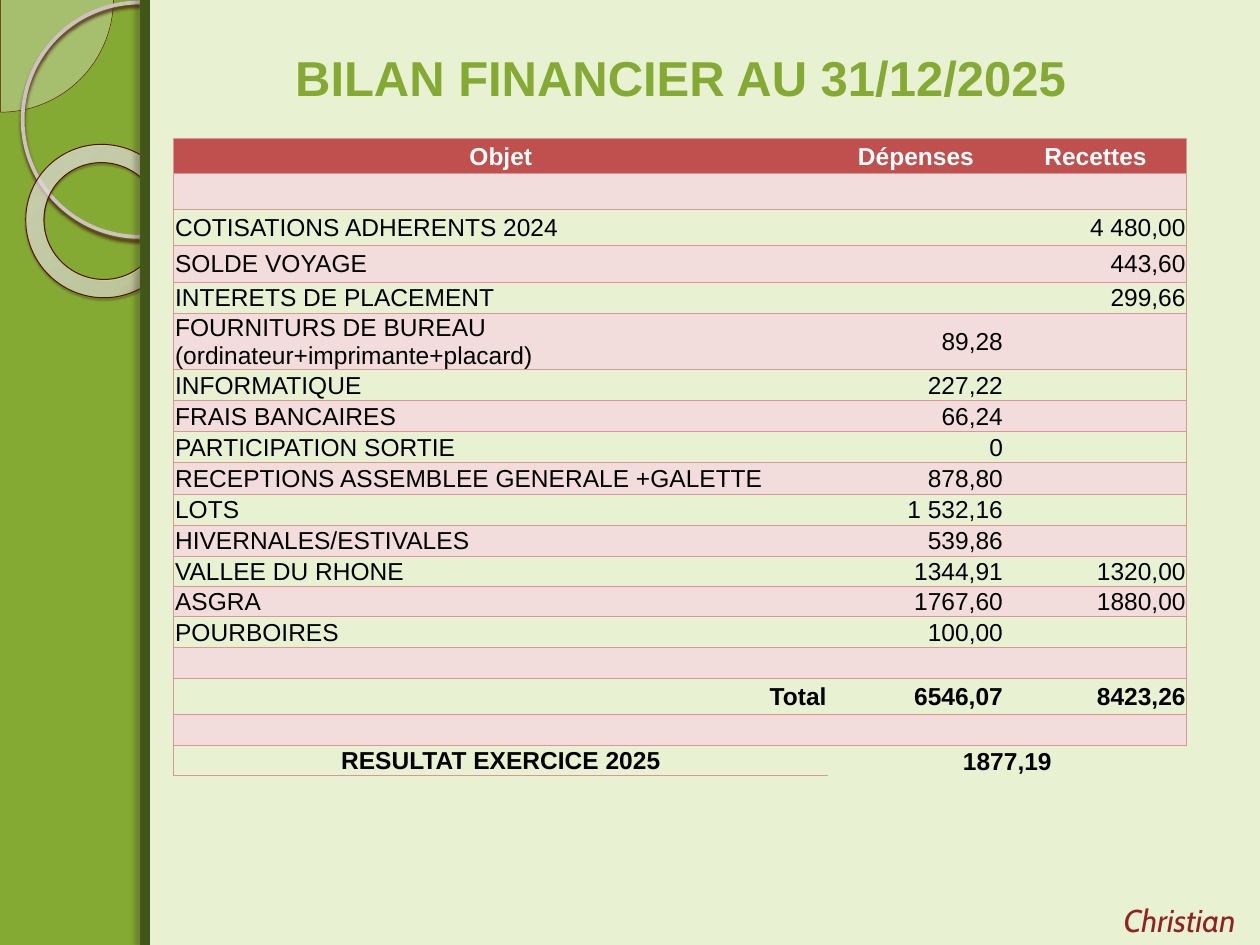
from lxml.etree import SubElement
from pptx import Presentation
from pptx.dml.color import RGBColor
from pptx.enum.shapes import MSO_SHAPE as Shape
from pptx.enum.text import MSO_ANCHOR as Anchor, PP_ALIGN as Align
from pptx.oxml import parse_xml
from pptx.oxml.ns import nsdecls, qn
from pptx.util import Inches, Pt

GREEN = RGBColor(0x84, 0xAA, 0x33)
DARK_GREEN = RGBColor(0x42, 0x55, 0x1A)
PALE_GREEN = RGBColor(0xE8, 0xF2, 0xD3)
LEAF = RGBColor(0xEC, 0xEA, 0xE9)
LEAF_EDGE = RGBColor(0x59, 0x15, 0x02)
RING = RGBColor(0xCE, 0xC2, 0xC0)
DONUT_EDGE = RGBColor(0x56, 0x12, 0x00)
RED = RGBColor(0xC0, 0x50, 0x4D)
PINK = RGBColor(0xF2, 0xDD, 0xDC)
BORDER = RGBColor(0xD9, 0x97, 0x95)
WINE = RGBColor(0x92, 0x22, 0x22)
WHITE = RGBColor(0xFF, 0xFF, 0xFF)
BLACK = RGBColor(0, 0, 0)
NO_STYLE = "{2D5ABB26-0587-4C30-8999-92F81FD0307C}"

prs = Presentation()
prs.slide_width, prs.slide_height = Inches(10), Inches(7.5)
s = prs.slides.add_slide(prs.slide_layouts[6])
s.background.fill.solid()
s.background.fill.fore_color.rgb = GREEN


def add_shape(kind, box, fill=None, line=None, width=0, shadow=None):
    """Shadow is colour, opacity in %, blur and distance in points, angle in degrees."""
    sp = s.shapes.add_shape(kind, *map(Inches, box))
    if fill is None:
        sp.fill.background()
    else:
        sp.fill.solid()
        sp.fill.fore_color.rgb = fill
    if line is None:
        sp.line.fill.background()
    else:
        sp.line.color.rgb = line
        sp.line.width = Pt(width)
    sp.shadow.inherit = False
    if shadow:
        color, opacity, blur, dist, angle = shadow
        effects = sp._element.spPr.find(qn("a:effectLst"))
        outer = SubElement(effects, qn("a:outerShdw"), blurRad=str(Pt(blur)),
                           dist=str(Pt(dist)), dir=str(angle * 60000),
                           algn="tl", rotWithShape="0")
        clr = SubElement(outer, qn("a:srgbClr"), val=color)
        SubElement(clr, qn("a:alpha"), val=str(opacity * 1000))
    return sp


# Side decoration
leaf = add_shape(Shape.PIE, (-0.89, -0.9, 1.79, 1.79), LEAF, LEAF_EDGE, 0.25)
leaf.adjustments[0], leaf.adjustments[1] = 0, 54
leaf_color = leaf._element.spPr.find(qn("a:solidFill"))[0]
SubElement(leaf_color, qn("a:alpha"), val="33000")

add_shape(Shape.OVAL, (0.18, 0.02, 1.86, 1.86), None, RING, 2.15,
          ("44170B", 85, 2, 2, 90))

donut = add_shape(Shape.DONUT, (0.2, 1.15, 1.23, 1.21), None, DONUT_EDGE, 0.58,
                  ("260901", 35, 1, 1.2, 75))
donut.rotation = 38.6
donut.adjustments[0] = 0.12
stops = "".join(
    f'<a:gs pos="{pos}000"><a:srgbClr val="{color}"><a:alpha val="{opacity}000"/></a:srgbClr></a:gs>'
    for pos, color, opacity in [(0, "F4F2F2", 70), (70, "F9F8F8", 55), (100, "5E1400", 60)])
gradient = parse_xml(
    f'<a:gradFill {nsdecls("a")} rotWithShape="1"><a:gsLst>{stops}</a:gsLst><a:path path="circle">'
    '<a:fillToRect l="-408000" t="-50000" r="508000" b="150000"/></a:path></a:gradFill>')
no_fill = donut._element.spPr.find(qn("a:noFill"))
donut._element.spPr.replace(no_fill, gradient)

add_shape(Shape.RECTANGLE, (1.11, 0, 8.89, 7.5), PALE_GREEN)
add_shape(Shape.RECTANGLE, (1.11, 0, 0.08, 7.5), DARK_GREEN,
          shadow=("29130D", 25, 3, 3, 180))

# Table: title, spacer, header, then rows banded in pink
BLANK = ("", "", "")
rows = [
    ("BILAN FINANCIER AU 31/12/2025", "", ""),
    BLANK,
    ("Objet", "Dépenses", "Recettes"),
    BLANK,
    ("COTISATIONS ADHERENTS 2024", "", "4 480,00"),
    ("SOLDE VOYAGE", "", "443,60"),
    ("INTERETS DE PLACEMENT", "", "299,66"),
    ("FOURNITURS DE BUREAU (ordinateur+imprimante+placard)", "89,28", ""),
    ("INFORMATIQUE", "227,22", ""),
    ("FRAIS BANCAIRES", "66,24", ""),
    ("PARTICIPATION SORTIE", "0", ""),
    ("RECEPTIONS ASSEMBLEE GENERALE +GALETTE", "878,80", ""),
    ("LOTS", "1 532,16", ""),
    ("HIVERNALES/ESTIVALES", "539,86", ""),
    ("VALLEE DU RHONE", "1344,91", "1320,00"),
    ("ASGRA", "1767,60", "1880,00"),
    ("POURBOIRES", "100,00", ""),
    BLANK,
    ("Total", "6546,07", "8423,26"),
    BLANK,
    ("RESULTAT EXERCICE 2025", "1877,19", ""),
]
HEADER, TOTAL, RESULT = 2, 18, len(rows) - 1
heights = {0: 0.49, 1: 0.25, 2: 0.28, 3: 0.28, 4: 0.29, 5: 0.29, 7: 0.44, TOTAL: 0.28}

frame = s.shapes.add_table(len(rows), 3, Inches(1.38), Inches(0.36), Inches(8.04), Inches(5.82))
table = frame.table
frame._element.find(".//" + qn("a:tableStyleId")).text = NO_STYLE
table.first_row = table.horz_banding = False
for column, width in zip(table.columns, (5.19, 1.4, 1.45)):
    column.width = Inches(width)

for i, row in enumerate(rows):
    table.rows[i].height = Inches(heights.get(i, 0.24))
    for j, text in enumerate(row):
        cell = table.cell(i, j)
        cell.margin_left = cell.margin_right = cell.margin_top = Inches(0.01)
        cell.margin_bottom = 0
        cell.vertical_anchor = Anchor.BOTTOM if i == 0 or (i == RESULT and j) else Anchor.MIDDLE

        if i == 0:
            sides = ""
        elif i == 1:
            sides = "B"
        elif i == RESULT and j:
            sides = "T"
        else:
            sides = ("LTB", "TB", "RTB")[j]
        tcPr = cell._tc.get_or_add_tcPr()
        for side in sides:
            ln = SubElement(tcPr, qn(f"a:ln{side}"), w=str(Pt(0.5)))
            SubElement(SubElement(ln, qn("a:solidFill")), qn("a:srgbClr"), val=str(BORDER))

        if i == HEADER or (i > HEADER and i % 2):
            cell.fill.solid()
            cell.fill.fore_color.rgb = RED if i == HEADER else PINK
        else:
            cell.fill.background()

        p = cell.text_frame.paragraphs[0]
        if not text:
            SubElement(p._p, qn("a:endParaRPr"), sz="1400")
            continue
        p.text = text
        if i in (0, HEADER, RESULT):
            p.alignment = Align.CENTER
        elif j or i == TOTAL:
            p.alignment = Align.RIGHT
        font = p.runs[0].font
        font.name = "Arial"
        font.size = Pt(28 if i == 0 else 14)
        font.bold = i in (0, HEADER, TOTAL, RESULT)
        font.color.rgb = {0: GREEN, HEADER: WHITE}.get(i, BLACK)

table.cell(0, 0).merge(table.cell(0, 2))
table.cell(RESULT, 1).merge(table.cell(RESULT, 2))

# Signature
tf = s.shapes.add_textbox(Inches(8.82), Inches(7.1), Inches(1.18), Inches(0.4)).text_frame
tf.word_wrap = True
tf.text = "Christian"
font = tf.paragraphs[0].runs[0].font
font.name, font.size, font.italic = "Cabin", Pt(18), True
font.color.rgb = WINE

prs.save("out.pptx")
